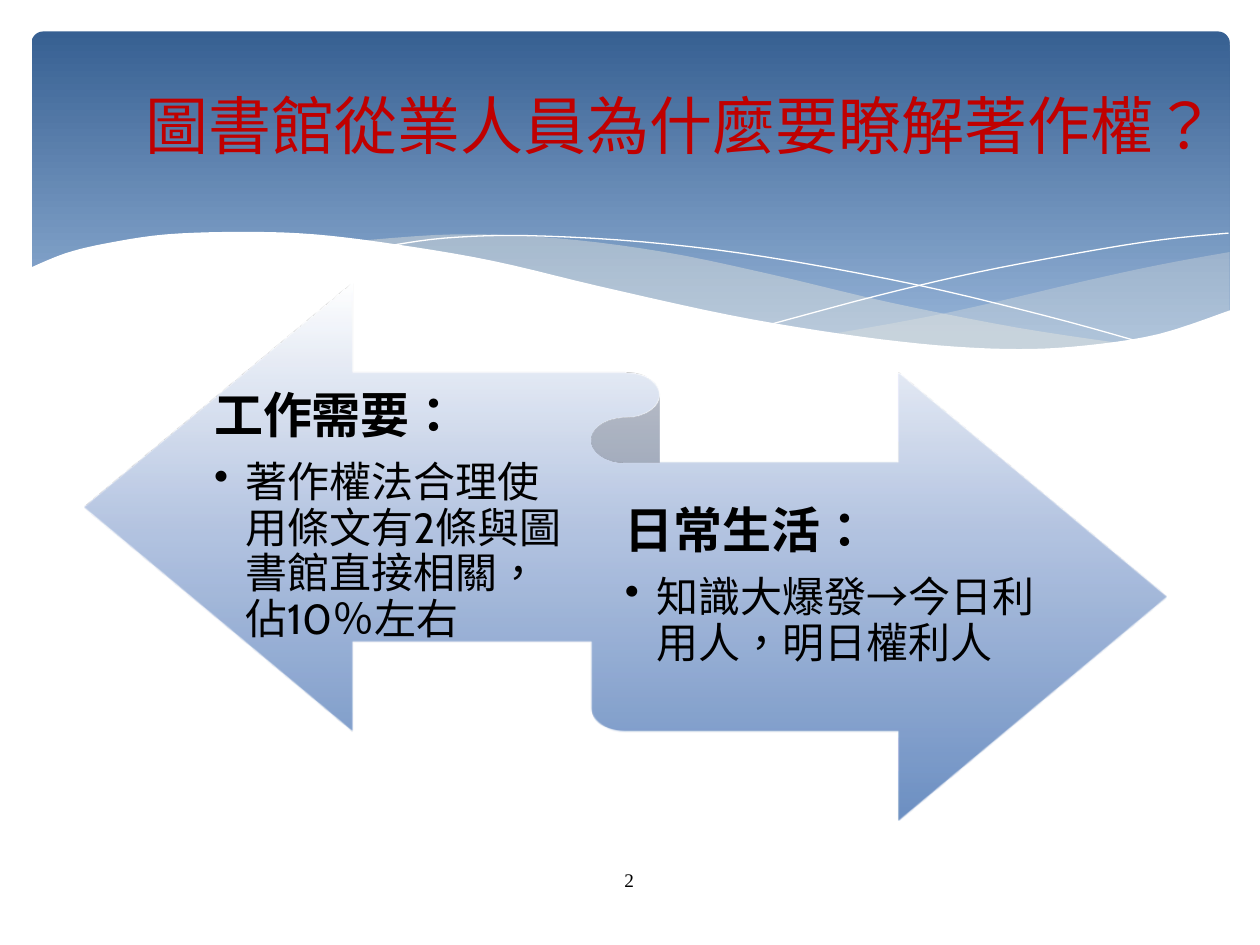
from dataclasses import dataclass

from lxml import etree
from pptx import Presentation
from pptx.dml.color import RGBColor
from pptx.enum.shapes import MSO_SHAPE
from pptx.enum.text import MSO_ANCHOR, PP_ALIGN
from pptx.oxml import parse_xml
from pptx.oxml.ns import nsdecls, qn
from pptx.util import Inches, Pt


@dataclass(frozen=True)
class Theme:
    white: str = "FFFFFF"
    black: str = "000000"
    red: str = "C00000"
    cream: str = "EEECE1"
    header: tuple = ((0, "376092", 100), (90, "95B3D7", 100))
    ribbon: tuple = ((0, "FFFFFF", 90), (44, "AFC0DF", 90), (100, "5D84BC", 90))
    body_font: str = "Cabin"
    cjk_font: str = "Noto Sans CJK SC"
    number_font: str = "Times New Roman"
    title_size: int = 36
    heading_size: int = 28
    bullet_size: int = 24
    number_size: int = 11


THEME = Theme()

RIGHT_FOLD = (
    [(9.76, 2), (9.21, 2.1), (8.61, 2.23), (7.53, 2.48), (6.61, 2.65)],
    [(6.61, 2.65), (7.18, 2.73), (7.81, 2.77), (8.54, 2.76), (9.21, 2.65), (9.76, 2.47)],
)
LONG_FOLD = (
    [(8.93, 2.73), (8.07, 2.6), (7.06, 2.4), (6.13, 2.18), (5.27, 2), (4.41, 1.89),
     (3.61, 1.86), (2.86, 1.91)],
    [(2.86, 1.91), (3.62, 2.03), (4.49, 2.22), (5.66, 2.48), (6.65, 2.66), (7.48, 2.76),
     (8.18, 2.79), (8.93, 2.73)],
)
FALLING_LINE = [(3.09, 1.95), (3.53, 1.89), (4.16, 1.87), (5.1, 1.92), (6.08, 2.04),
                (7.27, 2.26), (8.31, 2.51), (9.07, 2.72)]
RISING_LINE = [(6.13, 2.57), (6.95, 2.35), (7.76, 2.16), (8.66, 1.99), (9.24, 1.9),
               (9.75, 1.85)]
WHITE_WAVE = (
    [(9.77, 2.46), (9.2, 2.65), (8.63, 2.74), (8.09, 2.77), (7.44, 2.74), (6.68, 2.65),
     (5.79, 2.5), (4.75, 2.27), (3.91, 2.07), (3.15, 1.94), (2.5, 1.86), (1.93, 1.84),
     (1.32, 1.86), (0.85, 1.93), (0.52, 2.01), (0.23, 2.13)],
    [(0.23, 3.29), (9.77, 3.29)],
)


def rgb(color):
    return RGBColor.from_string(color)


def smooth(knots, steps=5):
    """Catmull-Rom curve through the knots, as a list of points."""
    if len(knots) < 3:
        return knots
    ends = [knots[0], *knots, knots[-1]]
    points = []
    for a, b, c, d in zip(ends, ends[1:], ends[2:], ends[3:]):
        for t in (i / steps for i in range(steps)):
            points.append(tuple(
                (2 * q + (r - p) * t + (2 * p - 5 * q + 4 * r - s) * t ** 2
                 + (3 * q - p - 3 * r + s) * t ** 3) / 2
                for p, q, r, s in zip(a, b, c, d)))
    return points + [knots[-1]]


def set_gradient(s, stops):
    """Vertical gradient from (position, colour, opacity) stops in percent."""
    marks = "".join(
        f'<a:gs pos="{pos * 1000}"><a:srgbClr val="{color}">'
        f'<a:alpha val="{alpha * 1000}"/></a:srgbClr></a:gs>'
        for pos, color, alpha in stops)
    grad = parse_xml(f'<a:gradFill {nsdecls("a")} rotWithShape="1"><a:gsLst>{marks}</a:gsLst>'
                     '<a:lin ang="5400000" scaled="0"/></a:gradFill>')
    s.fill.solid()
    solid = s._element.spPr.find(qn("a:solidFill"))
    solid.getparent().replace(solid, grad)


def add_gradient_shape(slide, kind, box, stops):
    s = slide.shapes.add_shape(kind, *map(Inches, box))
    s.shadow.inherit = False
    s.line.fill.background()
    set_gradient(s, stops)
    return s


def add_outline(slide, points, closed):
    start, *rest = [(Inches(x), Inches(y)) for x, y in points]
    builder = slide.shapes.build_freeform(*start)
    builder.add_line_segments(rest, close=closed)
    s = builder.convert_to_shape()
    s.shadow.inherit = False
    return s


def add_wave(slide, edges, color, opacity=100):
    s = add_outline(slide, [pt for edge in edges for pt in smooth(edge)], True)
    s.line.fill.background()
    s.fill.solid()
    s.fill.fore_color.rgb = rgb(color)
    if opacity < 100:
        clr = s._element.spPr.find(qn("a:solidFill"))[0]
        etree.SubElement(clr, qn("a:alpha")).set("val", str(opacity * 1000))


def add_curve(slide, knots, color):
    s = add_outline(slide, smooth(knots), False)
    s.fill.background()
    s.line.color.rgb = rgb(color)
    s.line.width = Pt(0)


def add_text_frame(slide, box, **fmt):
    tf = slide.shapes.add_textbox(*map(Inches, box)).text_frame
    for name, value in {"word_wrap": True, **fmt}.items():
        setattr(tf, name, value)
    return tf


def write(p, text, font, size, color, bold=False, **fmt):
    for name, value in fmt.items():
        setattr(p, name, value)
    r = p.add_run()
    r.text = text
    for name, value in {"name": font, "size": Pt(size), "bold": bold}.items():
        setattr(r.font, name, value)
    r.font.color.rgb = rgb(color)
    rPr = r._r.get_or_add_rPr()
    rPr.set("lang", "zh-TW")
    etree.SubElement(rPr, qn("a:ea")).set("typeface", THEME.cjk_font)


def set_bullet(p):
    pPr = p._p.get_or_add_pPr()
    for name, value in {"marL": Inches(0.25), "indent": -Inches(0.25),
                        "hangingPunct": 0}.items():
        pPr.set(name, str(value))
    etree.SubElement(pPr, qn("a:buChar")).set("char", "•")


def add_reason(slide, box, heading, detail):
    tf = add_text_frame(slide, box, vertical_anchor=MSO_ANCHOR.MIDDLE, margin_left=0,
                        margin_right=0, margin_top=Inches(0.11), margin_bottom=Inches(0.12))
    write(tf.paragraphs[0], heading, THEME.body_font, THEME.heading_size, THEME.black,
          bold=True, line_spacing=0.9, space_after=Pt(10))
    p = tf.add_paragraph()
    set_bullet(p)
    write(p, detail, THEME.body_font, THEME.bullet_size, THEME.black,
          line_spacing=0.9, space_after=Pt(3.5))


def add_header(slide):
    band = add_gradient_shape(slide, MSO_SHAPE.ROUNDED_RECTANGLE, (0.25, 0.25, 9.51, 2.7),
                              THEME.header)
    band.adjustments[0] = 0.034
    add_wave(slide, RIGHT_FOLD, THEME.cream, 29)
    add_wave(slide, LONG_FOLD, THEME.cream, 40)
    for knots in (FALLING_LINE, RISING_LINE):
        add_curve(slide, knots, THEME.white)
    add_wave(slide, WHITE_WAVE, THEME.white)


def add_title(slide, text):
    tf = add_text_frame(slide, (0.9, 0.36, 8.51, 1.25), vertical_anchor=MSO_ANCHOR.MIDDLE)
    p = tf.paragraphs[0]
    p._p.get_or_add_pPr().set("hangingPunct", "1")
    write(p, text, THEME.cjk_font, THEME.title_size, THEME.red, alignment=PP_ALIGN.CENTER)


def add_slide_number(slide, number):
    tf = add_text_frame(slide, (4.36, 6.84, 1.27, 0.4))
    write(tf.paragraphs[0], number, THEME.number_font, THEME.number_size, THEME.black,
          alignment=PP_ALIGN.CENTER)


def main():
    prs = Presentation()
    prs.slide_width, prs.slide_height = Inches(10), Inches(7.5)
    slide = prs.slides.add_slide(prs.slide_layouts[6])
    add_header(slide)
    add_gradient_shape(slide, MSO_SHAPE.LEFT_RIGHT_RIBBON, (0.67, 2.25, 8.59, 4.26),
                       THEME.ribbon)
    add_reason(slide, (1.7, 2.96, 2.83, 2.3), "工作需要：",
               "著作權法合理使用條文有2條與圖書館直接相關，佔10％左右")
    add_reason(slide, (4.96, 3.82, 3.35, 1.68), "日常生活：",
               "知識大爆發→今日利用人，明日權利人")
    add_slide_number(slide, "2")
    add_title(slide, "圖書館從業人員為什麼要瞭解著作權？")
    prs.save("out.pptx")


if __name__ == "__main__":
    main()
